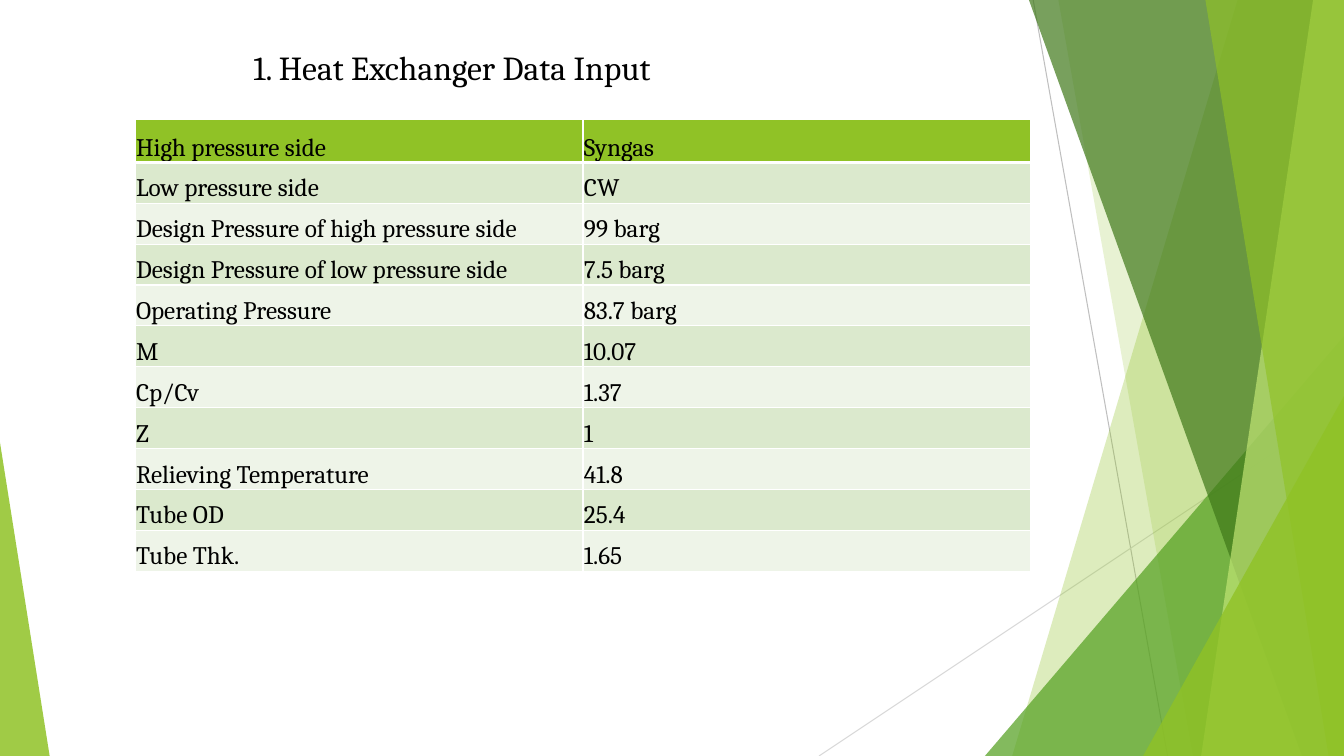
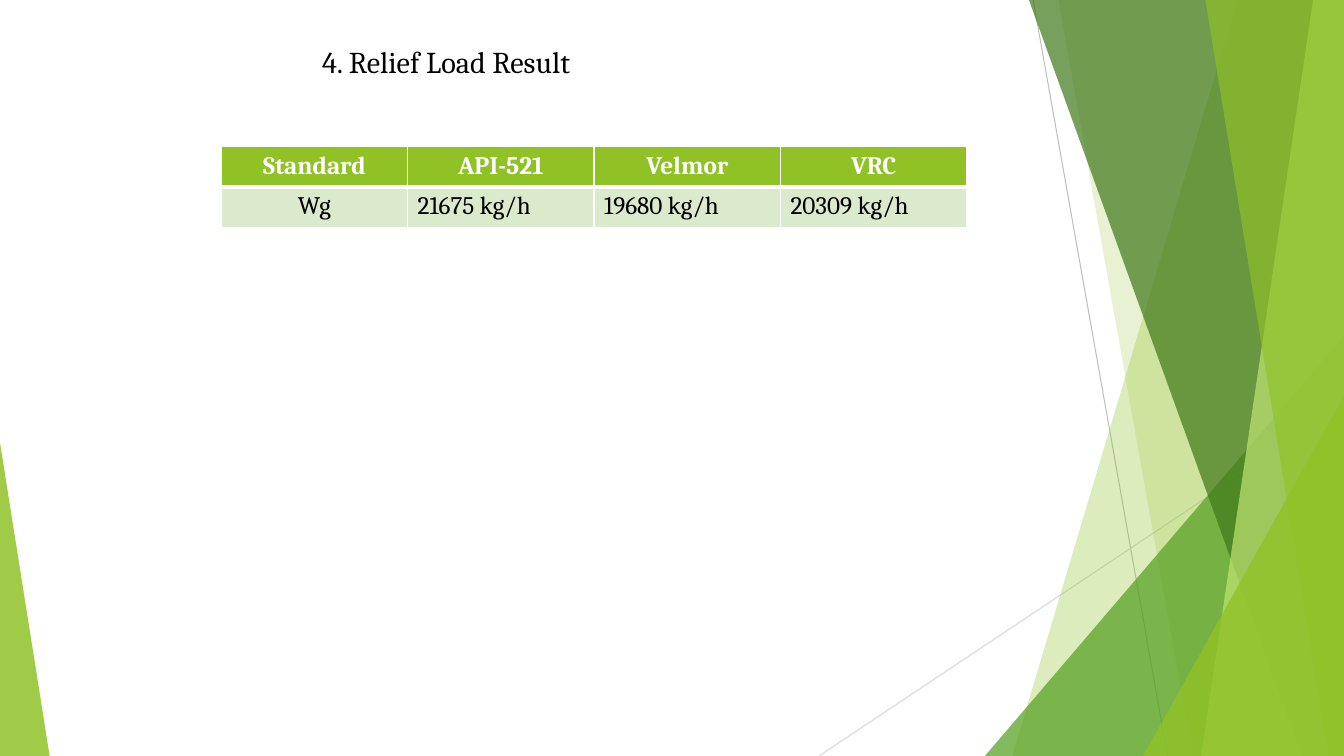
from dataclasses import dataclass

from lxml import etree
from pptx import Presentation
from pptx.dml.color import RGBColor
from pptx.enum.shapes import MSO_CONNECTOR, MSO_SHAPE
from pptx.enum.text import MSO_ANCHOR, PP_ALIGN
from pptx.oxml.ns import qn
from pptx.util import Pt

LEFT, CENTER = PP_ALIGN.LEFT, PP_ALIGN.CENTER
TOP, MIDDLE, BOTTOM = MSO_ANCHOR.TOP, MSO_ANCHOR.MIDDLE, MSO_ANCHOR.BOTTOM
TRIANGLE = MSO_SHAPE.ISOSCELES_TRIANGLE
STRAIGHT = MSO_CONNECTOR.STRAIGHT
TITLE_ONLY = 5


@dataclass(frozen=True)
class Theme:
    width: float = 960
    height: float = 540
    font: str = "Cambria"
    black: str = "000000"
    white: str = "FFFFFF"
    lime: str = "90C226"
    pale_lime: str = "C0E474"
    green: str = "54A021"
    dark_green: str = "3F7819"
    row_tints: tuple = ("DBE9CD", "EEF4E8")
    line_gray: str = "BFBFBF"
    light_gray: str = "D9D9D9"
    hairline: float = 0.75
    body_size: float = 18
    row_height: float = 29.2
    border: float = 1
    header_border: float = 3


THEME = Theme()

INPUT_ROWS = [
    ("High pressure side", "Syngas"),
    ("Low pressure side", "CW"),
    ("Design Pressure of high pressure side", "99 barg"),
    ("Design Pressure of low pressure side", "7.5 barg"),
    ("Operating Pressure", "83.7 barg"),
    ("M", "10.07"),
    ("Cp/Cv", "1.37"),
    ("Z", "1"),
    ("Relieving Temperature", "41.8"),
    ("Tube OD", "25.4"),
    ("Tube Thk.", "1.65"),
]

RESULT_ROWS = [
    ("Standard", "API-521", "Velmor", "VRC"),
    ("Wg", "21675 kg/h", "19680 kg/h", "20309 kg/h"),
]


def rgb(color):
    return RGBColor.from_string(color)


def paint(shape, color, opacity):
    shape.shadow.inherit = False
    shape.fill.solid()
    shape.fill.fore_color.rgb = rgb(color)
    shape.line.fill.background()
    tone = shape.fill._xPr.find(qn("a:solidFill"))[0]
    etree.SubElement(tone, qn("a:alpha"), val=str(opacity * 1000))
    return shape


def add_ray(page, start, end, color):
    ray = page.shapes.add_connector(STRAIGHT, *map(Pt, (*start, *end)))
    ray.line.color.rgb = rgb(color)
    ray.line.width = Pt(THEME.hairline)
    etree.SubElement(ray._element.spPr, qn("a:effectLst"))
    return ray


def add_edge_band(page, top_x, bottom_x, color, opacity):
    builder = page.shapes.build_freeform(top_x, 0, scale=Pt(1))
    builder.add_line_segments([
        (THEME.width, 0), (THEME.width, THEME.height), (bottom_x, THEME.height),
    ])
    return paint(builder.convert_to_shape(), color, opacity)


def add_corner(page, left, top, width, peak, color, opacity):
    height = THEME.height - top
    corner = page.shapes.add_shape(TRIANGLE, *map(Pt, (left, top, width, height)))
    corner.adjustments[0] = peak
    return paint(corner, color, opacity)


def draw_backdrop(page):
    return [
        add_ray(page, (738, 0), (834, 540), THEME.line_gray),
        add_ray(page, (960, 290), (585, 540), THEME.light_gray),
        add_edge_band(page, 884, 723, THEME.lime, 30),
        add_edge_band(page, 756, 852, THEME.lime, 20),
        add_corner(page, 703.5, 240, 256.5, 1, THEME.green, 72),
        add_edge_band(page, 735, 929.5, THEME.dark_green, 70),
        add_edge_band(page, 938, 858, THEME.pale_lime, 70),
        add_edge_band(page, 861, 949, THEME.lime, 65),
        add_corner(page, 816.5, 283, 143.5, 1, THEME.lime, 80),
        add_corner(page, 0, 316, 35.5, 0, THEME.lime, 85),
    ]


def move_to_layout(shapes, layout):
    tree = layout.shapes._spTree
    for placeholder in list(layout.placeholders)[1:]:
        tree.remove(placeholder._element)
    for position, shape in enumerate(shapes, start=2):
        tree.insert(position, shape._element)


def style_runs(para, size, color, bold=False):
    for span in para.runs:
        span.font.name = THEME.font
        span.font.size = Pt(size)
        span.font.bold = bold
        span.font.color.rgb = rgb(color)


def set_title(page, text, left, top, size):
    title = page.shapes.title
    title.left, title.top, title.width, title.height = map(Pt, (left, top, 480, 36))
    frame = title.text_frame
    frame.text = text
    frame.word_wrap = True
    frame.vertical_anchor = MIDDLE
    frame.margin_left = frame.margin_right = frame.margin_top = frame.margin_bottom = 0
    para = frame.paragraphs[0]
    para.alignment = LEFT
    style_runs(para, size, THEME.black)


def set_borders(cell, row):
    widths = {
        "lnL": THEME.border,
        "lnR": THEME.border,
        "lnT": THEME.header_border if row == 1 else THEME.border,
        "lnB": THEME.header_border if row == 0 else THEME.border,
    }
    properties = cell._tc.get_or_add_tcPr()
    for side, width in widths.items():
        line = etree.SubElement(properties, qn(f"a:{side}"), w=str(Pt(width)))
        fill = etree.SubElement(line, qn("a:solidFill"))
        etree.SubElement(fill, qn("a:srgbClr"), val=THEME.white)


def fill_cell(cell, text, row, align, ink, bold):
    set_borders(cell, row)
    cell.fill.solid()
    cell.fill.fore_color.rgb = rgb(THEME.row_tints[(row - 1) % 2] if row else THEME.lime)
    cell.text_frame.text = text
    para = cell.text_frame.paragraphs[0]
    para.alignment = align
    style_runs(para, THEME.body_size, ink, bold)


def add_grid(page, rows, left, top, column_width):
    columns = len(rows[0])
    grid = page.shapes.add_table(
        len(rows), columns, Pt(left), Pt(top),
        Pt(column_width * columns), Pt(THEME.row_height * len(rows)),
    ).table
    for column in grid.columns:
        column.width = Pt(column_width)
    for row in grid.rows:
        row.height = Pt(THEME.row_height)
    return grid


def add_input_table(page):
    grid = add_grid(page, INPUT_ROWS, 96.5, 85, 320)
    grid.rows[0].height = Pt(31)
    for row, values in enumerate(INPUT_ROWS):
        for column, text in enumerate(values):
            cell = grid.cell(row, column)
            fill_cell(cell, text, row, LEFT, THEME.black, False)
            cell.vertical_anchor = BOTTOM
            cell.margin_left = cell.margin_right = cell.margin_top = Pt(0.7)
            cell.margin_bottom = 0


def add_result_table(page):
    grid = add_grid(page, RESULT_ROWS, 158, 104.5, 133.2)
    for row, values in enumerate(RESULT_ROWS):
        header = row == 0
        ink = THEME.white if header else THEME.black
        for column, text in enumerate(values):
            align = CENTER if header or column == 0 else LEFT
            cell = grid.cell(row, column)
            fill_cell(cell, text, row, align, ink, header)
            cell.vertical_anchor = TOP


def main():
    deck = Presentation()
    deck.slide_width, deck.slide_height = Pt(THEME.width), Pt(THEME.height)
    layout = deck.slide_layouts[TITLE_ONLY]

    input_page = deck.slides.add_slide(layout)
    move_to_layout(draw_backdrop(input_page), layout)
    set_title(input_page, "1. Heat Exchanger Data Input", 181, 30, 24)
    add_input_table(input_page)

    result_page = deck.slides.add_slide(layout)
    set_title(result_page, "4. Relief Load Result", 230, 26, 21.6)
    add_result_table(result_page)

    deck.save("out.pptx")


if __name__ == "__main__":
    main()
